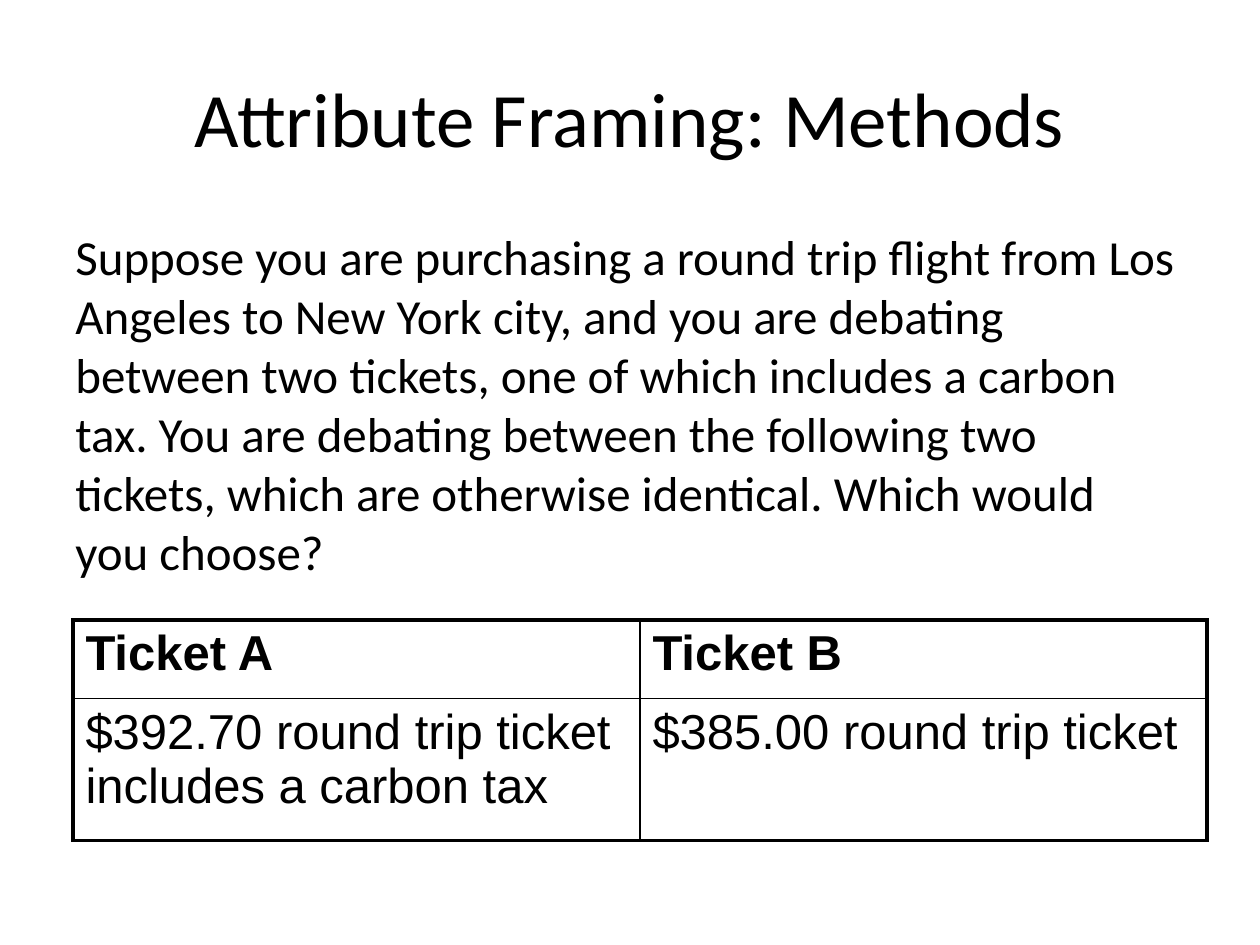
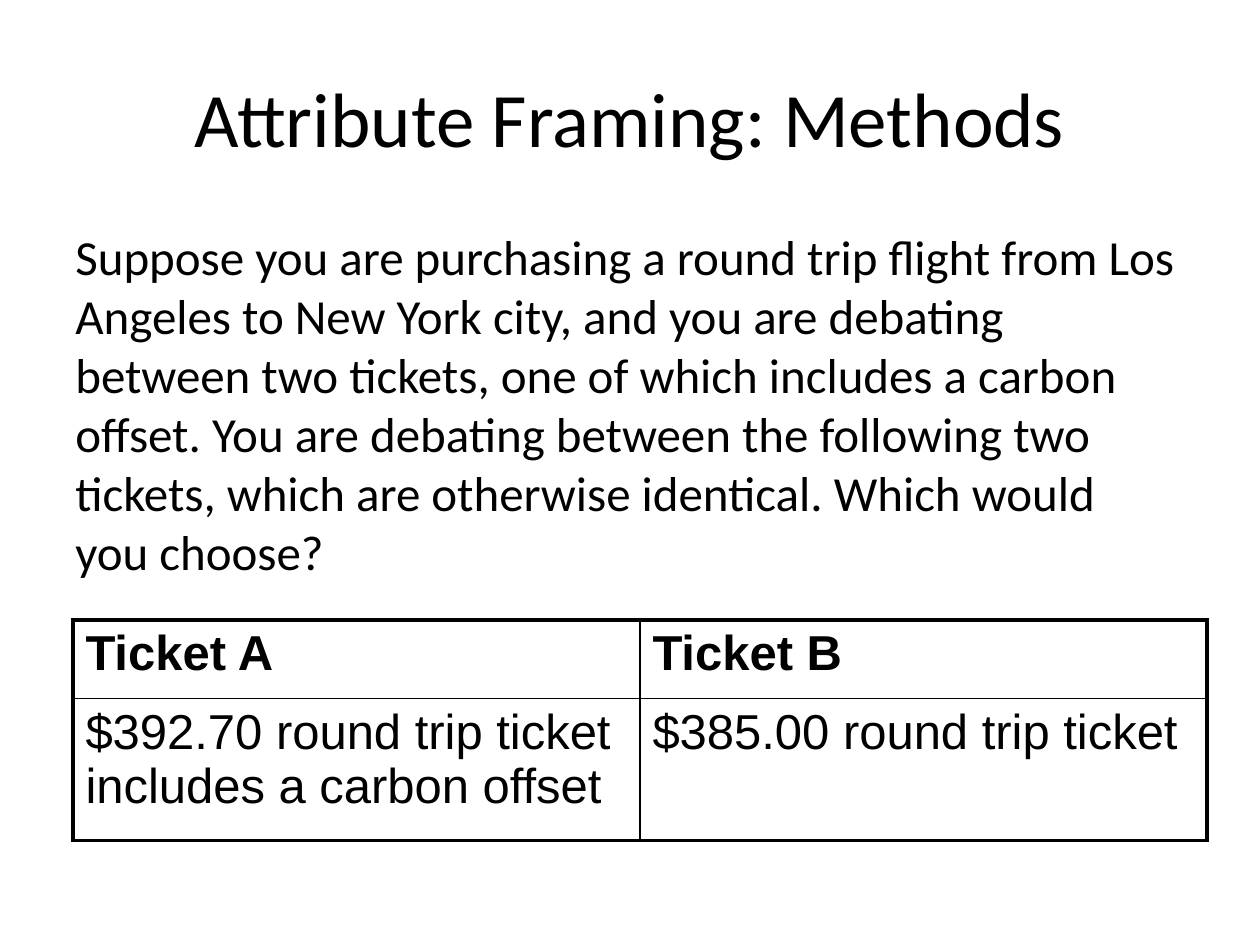
"""Build two ticket-choice slides on attribute framing."""
from dataclasses import dataclass
from typing import Any

from lxml.etree import SubElement
from pptx import Presentation
from pptx.dml.color import RGBColor
from pptx.enum.text import MSO_VERTICAL_ANCHOR as Anchor, PP_PARAGRAPH_ALIGNMENT as Align
from pptx.oxml.ns import qn
from pptx.util import Cm, Pt

BLACK = "000000"
WHITE = "FFFFFF"
TITLE_FORMAT = {"name": "Calibri", "size": Pt(44), "bold": False}
QUESTION_FORMAT = {"name": "Calibri", "size": Pt(28), "bold": False}
HEADING_FORMAT = {"name": "Arial", "size": Pt(28), "bold": True}
OFFER_FORMAT = {**HEADING_FORMAT, "bold": False}
OUTER_RULE, INNER_RULE = Pt(2.25), Pt(1)
ROW_HEIGHTS = (Cm(1.58), Cm(2.86))


@dataclass(frozen=True)
class Box:
    left: float
    top: float
    width: float
    height: float

    def lengths(self) -> tuple[Cm, ...]:
        return tuple(Cm(n) for n in (self.left, self.top, self.width, self.height))


@dataclass(frozen=True)
class Scenario:
    surcharge: str

    def question(self) -> str:
        return (
            "Suppose you are purchasing a round trip flight from Los Angeles to New York city, "
            "and you are debating between two tickets, one of which includes a carbon "
            f"{self.surcharge}. You are debating between the following two tickets, which are "
            "otherwise identical. Which would you choose?"
        )

    def tickets(self) -> tuple[tuple[str, str], ...]:
        return (
            ("Ticket A", "Ticket B"),
            (f"$392.70 round trip ticket\vincludes a carbon {self.surcharge}",
             "$385.00 round trip ticket"),
        )


TITLE_BOX = Box(1.27, 0.76, 22.86, 3.18)
QUESTION_BOX = Box(1.27, 4.45, 22.66, 7.42)
TICKETS_BOX = Box(1.47, 12.5, 22.86, 4.44)
SCENARIOS = (Scenario("tax"), Scenario("offset"))


def colour(hex_value: str) -> RGBColor:
    return RGBColor.from_string(hex_value)


def write(frame: Any, text: str, font_format: dict[str, Any], align: Align = Align.LEFT) -> None:
    paragraph = frame.paragraphs[0]
    paragraph.text = text
    paragraph.alignment = align
    for run in paragraph.runs:
        for attribute, value in font_format.items():
            setattr(run.font, attribute, value)
        run.font.color.rgb = colour(BLACK)


def add_title(slide: Any, text: str) -> None:
    title = slide.shapes.title
    title.left, title.top, title.width, title.height = TITLE_BOX.lengths()
    title.text_frame.vertical_anchor = Anchor.MIDDLE
    write(title.text_frame, text, TITLE_FORMAT, Align.CENTER)


def add_question(slide: Any, text: str) -> None:
    question = slide.shapes.add_textbox(*QUESTION_BOX.lengths()).text_frame
    question.word_wrap = True
    write(question, text, QUESTION_FORMAT)


def rule_cell(cell: Any, outer_sides: dict[str, bool]) -> None:
    properties = cell._tc.get_or_add_tcPr()
    for position, (side, is_outer) in enumerate(outer_sides.items()):
        width = OUTER_RULE if is_outer else INNER_RULE
        rule = SubElement(properties, qn(f"a:ln{side}"), w=str(int(width)))
        SubElement(SubElement(rule, qn("a:solidFill")), qn("a:srgbClr"), val=BLACK)
        properties.insert(position, rule)


def add_tickets(slide: Any, rows: tuple[tuple[str, str], ...]) -> None:
    last_row, last_column = len(rows) - 1, len(rows[0]) - 1
    tickets = slide.shapes.add_table(len(rows), len(rows[0]), *TICKETS_BOX.lengths()).table
    tickets.first_row = tickets.horz_banding = False
    for r, (texts, height) in enumerate(zip(rows, ROW_HEIGHTS)):
        tickets.rows[r].height = height
        for c, text in enumerate(texts):
            cell = tickets.cell(r, c)
            cell.fill.background()
            write(cell.text_frame, text, OFFER_FORMAT if r else HEADING_FORMAT)
            rule_cell(cell, {"L": c == 0, "R": c == last_column,
                             "T": r == 0, "B": r == last_row})


def main() -> None:
    deck = Presentation()
    deck.slide_width, deck.slide_height = Cm(25.4), Cm(19.05)
    title_only = deck.slide_layouts[5]
    background = deck.slide_master.background.fill
    background.solid()
    background.fore_color.rgb = colour(WHITE)
    for scenario in SCENARIOS:
        slide = deck.slides.add_slide(title_only)
        add_title(slide, "Attribute Framing: Methods")
        add_question(slide, scenario.question())
        add_tickets(slide, scenario.tickets())
    deck.save("out.pptx")


if __name__ == "__main__":
    main()
